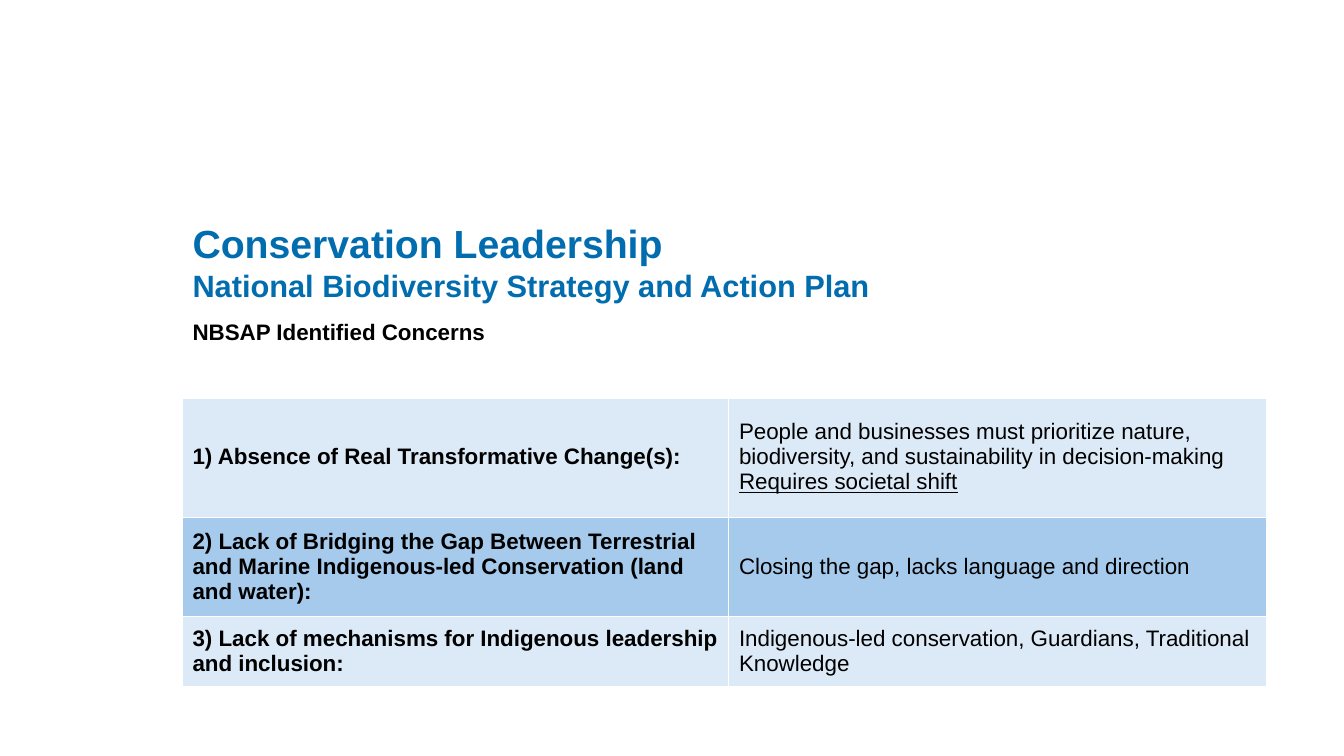
from lxml import etree
from pptx import Presentation
from pptx.dml.color import RGBColor
from pptx.enum.text import MSO_ANCHOR, MSO_AUTO_SIZE, PP_ALIGN
from pptx.oxml.ns import qn
from pptx.util import Inches, Pt

MIDDLE = MSO_ANCHOR.MIDDLE
TOP = MSO_ANCHOR.TOP
LEFT = PP_ALIGN.LEFT
NO_AUTOFIT = MSO_AUTO_SIZE.NONE

FONT = "Arial"
BLUE, BLACK, WHITE = "016DAF", "000000", "FFFFFF"
BANDS = ("DCEAF7", "A6CAEC")
THIN, THICK = 0.77, 2.33
SLIDE_WIDTH, SLIDE_HEIGHT = 13.33, 7.5
TITLE_BOX = (1.81, 1.87, 10.6, 1.45)
TABLE_BOX = (1.81, 3.13, 10.75, 3.68)
COLUMN_WIDTHS = (5.42, 5.33)
ROW_HEIGHTS = (0.81, 1.19, 0.99, 0.69)

TITLE_LINES = (
    ("Conservation Leadership", 28),
    ("National Biodiversity Strategy and Action Plan", 22),
)
TABLE_HEADING = "NBSAP Identified Concerns"
CONCERNS = (
    ("1) Absence of Real Transformative Change(s):",
     "People and businesses must prioritize nature, biodiversity, and sustainability in decision-making",
     "Requires societal shift"),
    ("2) Lack of Bridging the Gap Between Terrestrial and Marine Indigenous-led Conservation (land and water):",
     "Closing the gap, lacks language and direction"),
    ("3) Lack of mechanisms for Indigenous leadership and inclusion:",
     "Indigenous-led conservation, Guardians, Traditional Knowledge"),
)


def color(value):
    return RGBColor.from_string(value)


def add_run(paragraph, text, size, text_color, bold=False, underline=False):
    run = paragraph.add_run()
    run.text = text
    font = run.font
    font.name, font.size = FONT, Pt(size)
    font.bold, font.underline = bold, underline
    font.color.rgb = color(text_color)


def set_borders(cell, top=THIN, bottom=THIN):
    properties = cell._tc.get_or_add_tcPr()
    for side, width in (("L", THIN), ("R", THIN), ("T", top), ("B", bottom)):
        line = etree.SubElement(properties, qn(f"a:ln{side}"), w=str(Pt(width)))
        fill = etree.SubElement(line, qn("a:solidFill"))
        etree.SubElement(fill, qn("a:srgbClr"), val=WHITE)


def write_cell(cell, lines, bold=False, anchor=MIDDLE):
    cell.vertical_anchor = anchor
    frame = cell.text_frame
    for index, text in enumerate(lines):
        paragraph = frame.add_paragraph() if index else frame.paragraphs[0]
        add_run(paragraph, text, 16, BLACK, bold, underline=index > 0)


def place_title(slide, box):
    title = slide.shapes.title
    title.left, title.top, title.width, title.height = map(Inches, box)
    frame = title.text_frame
    frame.auto_size = NO_AUTOFIT
    frame.word_wrap = True
    frame.vertical_anchor = MIDDLE
    paragraph = frame.paragraphs[0]
    paragraph.alignment = LEFT
    for index, (text, size) in enumerate(TITLE_LINES):
        if index:
            paragraph.add_line_break()
        add_run(paragraph, text, size, BLUE, bold=True)


def place_concerns_table(slide, box):
    table = slide.shapes.add_table(
        len(ROW_HEIGHTS), len(COLUMN_WIDTHS), *map(Inches, box)).table
    table.first_row = table.horz_banding = False
    for column, width in zip(table.columns, COLUMN_WIDTHS):
        column.width = Inches(width)
    for row, height in zip(table.rows, ROW_HEIGHTS):
        row.height = Inches(height)

    heading = table.cell(0, 0)
    heading.merge(table.cell(0, 1))
    write_cell(heading, (TABLE_HEADING,), bold=True, anchor=TOP)
    for cell in table.rows[0].cells:
        set_borders(cell, bottom=THICK)
        cell.fill.background()

    for row, (concern, *details) in enumerate(CONCERNS, start=1):
        write_cell(table.cell(row, 0), (concern,), bold=True)
        write_cell(table.cell(row, 1), details)
        for cell in table.rows[row].cells:
            set_borders(cell, top=THICK if row == 1 else THIN)
            cell.fill.solid()
            cell.fill.fore_color.rgb = color(BANDS[(row - 1) % len(BANDS)])


def main():
    presentation = Presentation()
    presentation.slide_width = Inches(SLIDE_WIDTH)
    presentation.slide_height = Inches(SLIDE_HEIGHT)
    slide = presentation.slides.add_slide(
        presentation.slide_layouts.get_by_name("Title Only"))
    place_concerns_table(slide, TABLE_BOX)
    place_title(slide, TITLE_BOX)
    presentation.save("out.pptx")


if __name__ == "__main__":
    main()
